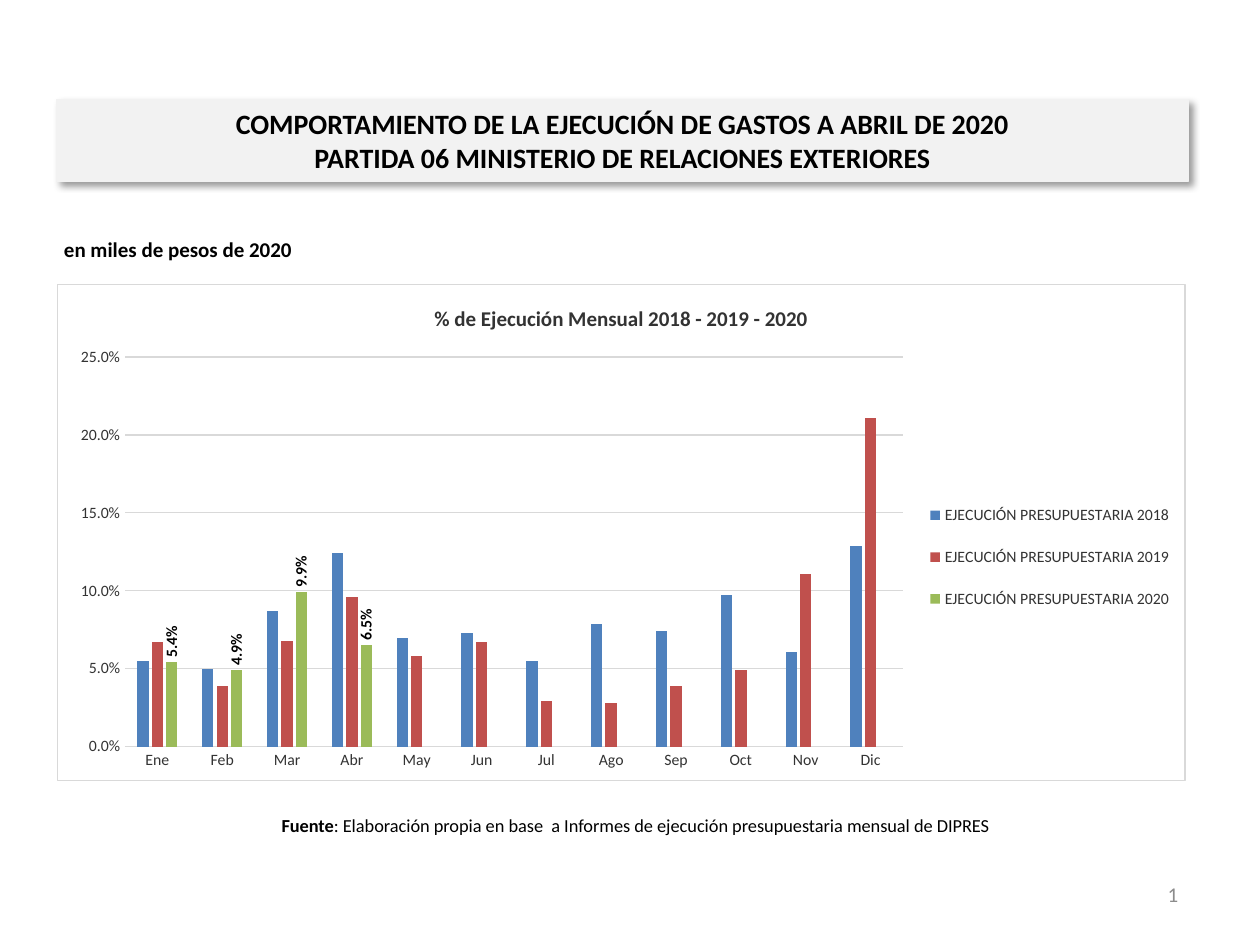
import dataclasses

import lxml.etree
import pptx
import pptx.chart.data
import pptx.dml.color
import pptx.enum.chart
import pptx.enum.text
import pptx.oxml.ns
import pptx.util

PP = pptx.enum.text.PP_ALIGN
ANCHOR = pptx.enum.text.MSO_ANCHOR
XL = pptx.enum.chart
COLUMNS, ROWS = 100, 75


@dataclasses.dataclass(frozen=True)
class Theme:
    """Colours, font and type sizes of the slide."""
    font: str = "Calibri"
    text: str = "000000"
    chart_text: str = "333333"
    muted: str = "8C8C8C"
    paper: str = "FFFFFF"
    band: str = "F2F2F2"
    rule: str = "D9D9D9"
    series: tuple = ("4F81BD", "C0504D", "9BBB59")
    title: float = 16
    body: float = 12
    source: float = 10.5
    chart: float = 9
    line: float = 0.75


THEME = Theme()
MONTHS = "Ene Feb Mar Abr May Jun Jul Ago Sep Oct Nov Dic".split()
SPENDING = {
    2018: (5.5, 5, 8.7, 12.4, 7, 7.3, 5.5, 7.9, 7.4, 9.7, 6.1, 12.9),
    2019: (6.7, 3.9, 6.8, 9.6, 5.8, 6.7, 2.9, 2.8, 3.9, 4.9, 11.1, 21.1),
    2020: (5.4, 4.9, 9.9, 6.5),
}


def rgb(color):
    """Return a colour object for a hex string."""
    return pptx.dml.color.RGBColor.from_string(color)


def add_xml(parent, tag, **attrs):
    """Append a prefixed XML element and return it."""
    values = {key: str(value) for key, value in attrs.items()}
    return lxml.etree.SubElement(parent, pptx.oxml.ns.qn(tag), values)


def grid_box(prs, left, top, width, height):
    """Turn grid columns and rows into slide lengths."""
    dx, dy = prs.slide_width / COLUMNS, prs.slide_height / ROWS
    return [round(n) for n in (left * dx, top * dy, width * dx, height * dy)]


def style_font(font, size, color=THEME.text, bold=False):
    """Set the face, size, colour and weight of a font."""
    font.name, font.size, font.bold = THEME.font, pptx.util.Pt(size), bold
    font.color.rgb = rgb(color)


def style_line(line):
    """Draw a line as a thin grey rule."""
    line.color.rgb, line.width = rgb(THEME.rule), pptx.util.Pt(THEME.line)


def place_title(s, box, text):
    """Place the title as a pale band with a soft shadow."""
    sp = s.shapes.title
    sp.left, sp.top, sp.width, sp.height = box
    sp.fill.solid()
    sp.fill.fore_color.rgb = rgb(THEME.band)
    sp.line.color.rgb, sp.line.width = rgb(THEME.band), pptx.util.Pt(THEME.line)
    effects = add_xml(sp.element.spPr, "a:effectLst")
    shadow = add_xml(effects, "a:outerShdw", blurRad=pptx.util.Pt(4), dist=pptx.util.Pt(3),
                     dir=45 * 60000, algn="tl", rotWithShape=0)
    add_xml(add_xml(shadow, "a:srgbClr", val="000000"), "a:alpha", val=40000)
    tf = sp.text_frame
    tf.auto_size = pptx.enum.text.MSO_AUTO_SIZE.NONE
    tf.vertical_anchor = ANCHOR.MIDDLE
    p = tf.paragraphs[0]
    p.text, p.alignment = text, PP.CENTER
    for r in p.runs:
        style_font(r.font, THEME.title, bold=True)


def place_text(s, box, runs, size, align=PP.LEFT, anchor=ANCHOR.MIDDLE):
    """Place a line of text made of (text, bold) runs."""
    tf = s.shapes.add_textbox(*box).text_frame
    tf.word_wrap, tf.vertical_anchor = True, anchor
    p = tf.paragraphs[0]
    p.alignment = align
    for text, bold in runs:
        r = p.add_run()
        r.text = text
        style_font(r.font, size, bold=bold)
    return p


def place_page_number(s, box, number):
    """Place the page number as a live field."""
    p = place_text(s, box, [(number, False)], THEME.body, PP.RIGHT)
    r = p.runs[0]
    r.font.color.rgb = rgb(THEME.muted)
    element = r._r
    element.tag = pptx.oxml.ns.qn("a:fld")
    element.set("id", "{B6F15528-21DE-4FAA-801E-634DDDAF4B2B}")
    element.set("type", "slidenum")


def set_layout(parent, index, x, y, w, h, inner=False):
    """Fix a chart part at shares of the chart's size."""
    for old in parent.findall(pptx.oxml.ns.qn("c:layout")):
        parent.remove(old)
    layout = add_xml(parent, "c:layout")
    parent.insert(index, layout)
    manual = add_xml(layout, "c:manualLayout")
    if inner:
        add_xml(manual, "c:layoutTarget", val="inner")
    for mode in ("xMode", "yMode"):
        add_xml(manual, f"c:{mode}", val="edge")
    for key, value in dict(x=x, y=y, w=w, h=h).items():
        add_xml(manual, f"c:{key}", val=value)


def frame_chart(chart):
    """Give the chart area a white fill and a thin border."""
    space = chart._chartSpace
    props = add_xml(space, "c:spPr")
    space.find(pptx.oxml.ns.qn("c:chart")).addnext(props)
    add_xml(add_xml(props, "a:solidFill"), "a:srgbClr", val=THEME.paper)
    line = add_xml(props, "a:ln", w=pptx.util.Pt(THEME.line))
    add_xml(add_xml(line, "a:solidFill"), "a:srgbClr", val=THEME.rule)


def style_axes(chart):
    """Format the month and percentage axes."""
    months, shares = chart.category_axis, chart.value_axis
    for axis in (months, shares):
        axis.major_tick_mark = axis.minor_tick_mark = XL.XL_TICK_MARK.NONE
        style_font(axis.tick_labels.font, THEME.chart, THEME.chart_text)
    style_line(months.format.line)
    shares.format.line.fill.background()
    style_line(shares.major_gridlines.format.line)
    shares.minimum_scale, shares.maximum_scale, shares.major_unit = 0, 0.25, 0.05
    shares.tick_labels.number_format = "0.0%"
    shares.tick_labels.number_format_is_linked = False


def style_series(plot):
    """Colour the columns and label the latest year upright."""
    plot.gap_width, plot.overlap, plot.vary_by_categories = 219, -27, False
    for series, color in zip(plot.series, THEME.series):
        series.format.fill.solid()
        series.format.fill.fore_color.rgb = rgb(color)
        series.invert_if_negative = False
    labels = series.data_labels
    labels.show_value, labels.position = True, XL.XL_LABEL_POSITION.OUTSIDE_END
    labels.number_format, labels.number_format_is_linked = "0.0%", False
    style_font(labels.font, THEME.chart, bold=True)
    body = labels._element.find(".//" + pptx.oxml.ns.qn("a:bodyPr"))
    body.set("rot", str(-90 * 60000))
    body.set("vert", "horz")


def place_chart(s, box, title):
    """Place the monthly spending chart."""
    data = pptx.chart.data.CategoryChartData(number_format="0.0%")
    data.categories = MONTHS
    for year, values in SPENDING.items():
        shares = [round(v / 100, 3) for v in values]
        data.add_series(f"EJECUCIÓN PRESUPUESTARIA {year}", shares + [None] * (len(MONTHS) - len(shares)))
    chart = s.shapes.add_chart(XL.XL_CHART_TYPE.COLUMN_CLUSTERED, *box, data).chart
    style_font(chart.font, 10)
    frame_chart(chart)
    chart.has_title = True
    chart.chart_title.include_in_layout = False
    p = chart.chart_title.text_frame.paragraphs[0]
    p.text = title
    style_font(p.runs[0].font, THEME.body, THEME.chart_text, True)
    chart.has_legend = True
    chart.legend.position = XL.XL_LEGEND_POSITION.RIGHT
    chart.legend.include_in_layout = False
    style_font(chart.legend.font, THEME.chart, THEME.chart_text)
    style_axes(chart)
    style_series(chart.plots[0])
    set_layout(chart._chartSpace.chart.plotArea, 0, 0.06, 0.147, 0.69, 0.785, inner=True)
    set_layout(chart.legend._element, 1, 0.77, 0.4, 0.22, 0.3)


def main():
    """Build and save the slide."""
    prs = pptx.Presentation()
    prs.slide_width, prs.slide_height = pptx.util.Inches(10), pptx.util.Inches(7.5)
    s = prs.slides.add_slide(prs.slide_layouts.get_by_name("Title Only"))
    place_title(s, grid_box(prs, 4.5, 7.9, 89.8, 6.5),
                "COMPORTAMIENTO DE LA EJECUCIÓN DE GASTOS A ABRIL DE 2020\n"
                "PARTIDA 06 MINISTERIO DE RELACIONES EXTERIORES")
    place_text(s, grid_box(prs, 4.1, 18.3, 90, 4), [("en miles de pesos de 2020", True)],
               THEME.body, anchor=ANCHOR.TOP)
    place_chart(s, grid_box(prs, 4.5, 22.5, 89.6, 39.5), "% de Ejecución Mensual 2018 - 2019 - 2020")
    source = ": Elaboración propia en base  a Informes de ejecución presupuestaria mensual de DIPRES"
    place_text(s, grid_box(prs, 4.5, 63.5, 91.9, 4), [("Fuente", True), (source, False)],
               THEME.source, PP.CENTER)
    place_page_number(s, grid_box(prs, 71.2, 69, 23.3, 4), "5")
    prs.save("out.pptx")


if __name__ == "__main__":
    main()
